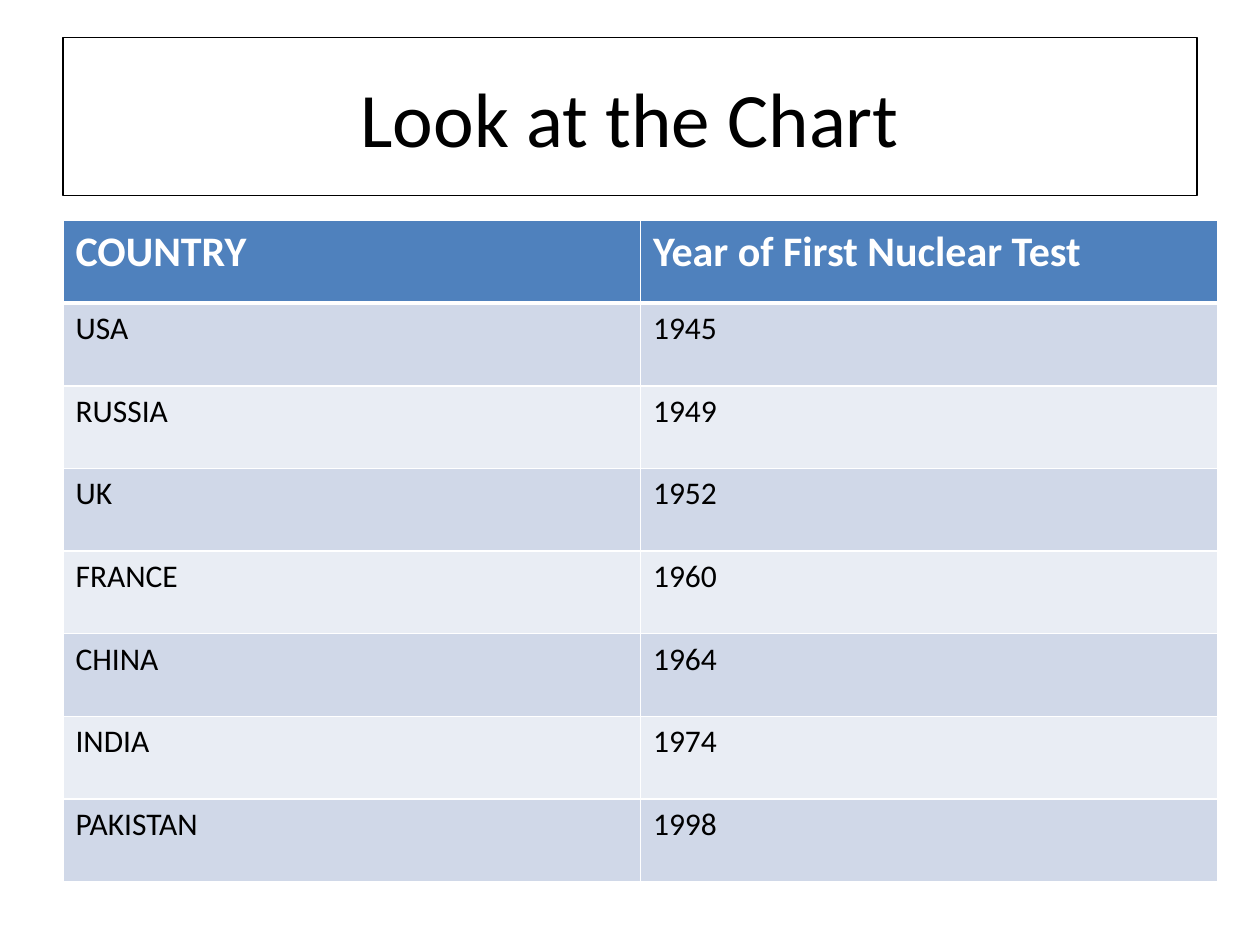
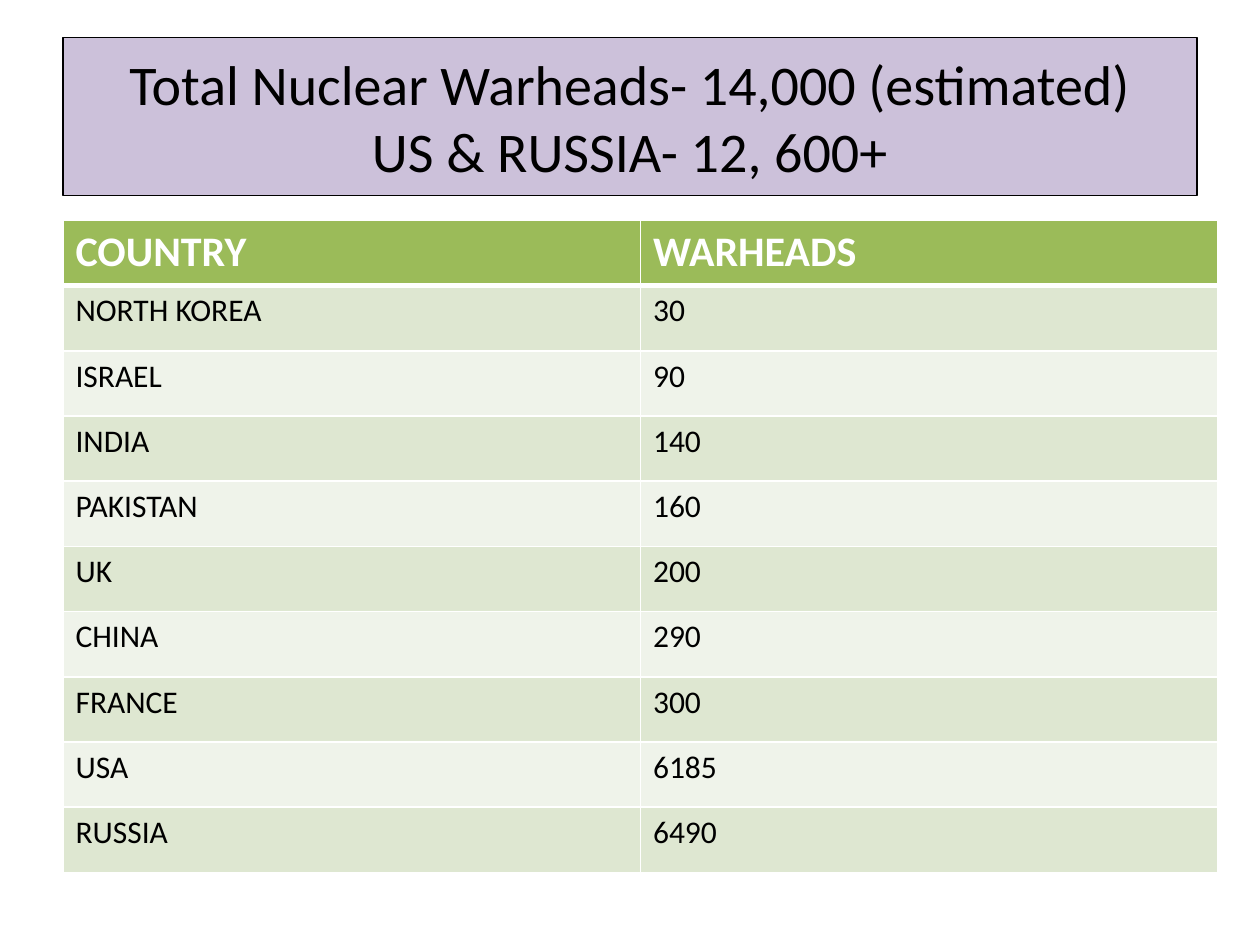
from lxml import etree
from pptx import Presentation
from pptx.dml.color import RGBColor
from pptx.enum.shapes import MSO_SHAPE
from pptx.enum.text import MSO_ANCHOR, PP_ALIGN
from pptx.oxml.ns import qn
from pptx.util import Inches, Pt

RECTANGLE = MSO_SHAPE.RECTANGLE
MIDDLE = MSO_ANCHOR.MIDDLE
CENTER = PP_ALIGN.CENTER

BLACK = RGBColor(0x00, 0x00, 0x00)
WHITE = RGBColor(0xFF, 0xFF, 0xFF)
LAVENDER = RGBColor(0xCC, 0xC1, 0xDA)
BLUE = RGBColor(0x4F, 0x81, 0xBD)
BLUE_BAND = RGBColor(0xD0, 0xD8, 0xE8)
BLUE_PALE = RGBColor(0xE9, 0xED, 0xF4)
GREEN = RGBColor(0x9B, 0xBB, 0x59)
GREEN_BAND = RGBColor(0xDE, 0xE7, 0xD1)
GREEN_PALE = RGBColor(0xEF, 0xF3, 0xEA)

WIDTH, HEIGHT = Inches(10), Inches(7.5)
MARGIN = round(WIDTH * 0.05)
TITLE_TOP = round(HEIGHT * 0.04)
TITLE_HEIGHT = HEIGHT // 6
TABLE_TOP = round(HEIGHT * 7 / 30)
TABLE_WIDTH = round(WIDTH * 11 / 12)

FONT = "Calibri"
HEADER_FORMAT = {"name": FONT, "size": Pt(24), "bold": True}
BODY_FORMAT = {"name": FONT, "size": Pt(18), "bold": False}
THIN, THICK = Pt(1), Pt(3)

FIRST_TESTS = [
    ("COUNTRY", "Year of First Nuclear Test"),
    ("USA", "1945"),
    ("RUSSIA", "1949"),
    ("UK", "1952"),
    ("FRANCE", "1960"),
    ("CHINA", "1964"),
    ("INDIA", "1974"),
    ("PAKISTAN", "1998"),
]
WARHEADS = [
    ("COUNTRY", "WARHEADS"),
    ("NORTH KOREA", "30"),
    ("ISRAEL", "90"),
    ("INDIA", "140"),
    ("PAKISTAN", "160"),
    ("UK", "200"),
    ("CHINA", "290"),
    ("FRANCE", "300"),
    ("USA", "6185"),
    ("RUSSIA", "6490"),
]


def format_runs(paragraph, values, color):
    for run in paragraph.runs:
        for name, value in values.items():
            setattr(run.font, name, value)
        run.font.color.rgb = color


def add_title(slide, text, size, fill=None):
    shape = slide.shapes.add_shape(
        RECTANGLE, MARGIN, TITLE_TOP, WIDTH - 2 * MARGIN, TITLE_HEIGHT
    )
    shape.shadow.inherit = False
    if fill is None:
        shape.fill.background()
    else:
        shape.fill.solid()
        shape.fill.fore_color.rgb = fill
    shape.line.color.rgb = BLACK
    shape.line.width = Pt(0.75)
    frame = shape.text_frame
    frame.word_wrap = True
    frame.vertical_anchor = MIDDLE
    paragraph = frame.paragraphs[0]
    paragraph.text = text
    paragraph.alignment = CENTER
    format_runs(paragraph, {"name": FONT, "size": Pt(size)}, BLACK)


def set_borders(cell, top, bottom):
    properties = cell._tc.get_or_add_tcPr()
    widths = {"a:lnL": THIN, "a:lnR": THIN, "a:lnT": top, "a:lnB": bottom}
    for position, (tag, width) in enumerate(widths.items()):
        line = etree.Element(qn(tag), w=str(width))
        fill = etree.SubElement(line, qn("a:solidFill"))
        etree.SubElement(fill, qn("a:srgbClr"), val=str(WHITE))
        properties.insert(position, line)


def add_banded_table(slide, records, row_height, header_color, bands):
    table = slide.shapes.add_table(
        len(records), len(records[0]), MARGIN, TABLE_TOP,
        TABLE_WIDTH, row_height * len(records),
    ).table
    for row, record in enumerate(records):
        is_header = row == 0
        fill = header_color if is_header else bands[(row - 1) % len(bands)]
        values = HEADER_FORMAT if is_header else BODY_FORMAT
        for column, text in enumerate(record):
            cell = table.cell(row, column)
            cell.text = text
            cell.fill.solid()
            cell.fill.fore_color.rgb = fill
            format_runs(
                cell.text_frame.paragraphs[0], values, WHITE if is_header else BLACK
            )
            set_borders(
                cell, THICK if row == 1 else THIN, THICK if is_header else THIN
            )


def main():
    presentation = Presentation()
    presentation.slide_width = WIDTH
    presentation.slide_height = HEIGHT
    blank = presentation.slide_layouts[6]

    slide = presentation.slides.add_slide(blank)
    add_title(slide, "Look at the Chart", 44)
    add_banded_table(
        slide, FIRST_TESTS, round(HEIGHT * 0.7 / 8), BLUE, (BLUE_BAND, BLUE_PALE)
    )

    slide = presentation.slides.add_slide(blank)
    add_title(
        slide,
        "Total Nuclear Warheads- 14,000 (estimated)\vUS & RUSSIA- 12, 600+",
        32,
        LAVENDER,
    )
    add_banded_table(
        slide, WARHEADS, round(HEIGHT * 0.69 / 10), GREEN, (GREEN_BAND, GREEN_PALE)
    )

    presentation.save("out.pptx")


if __name__ == "__main__":
    main()
